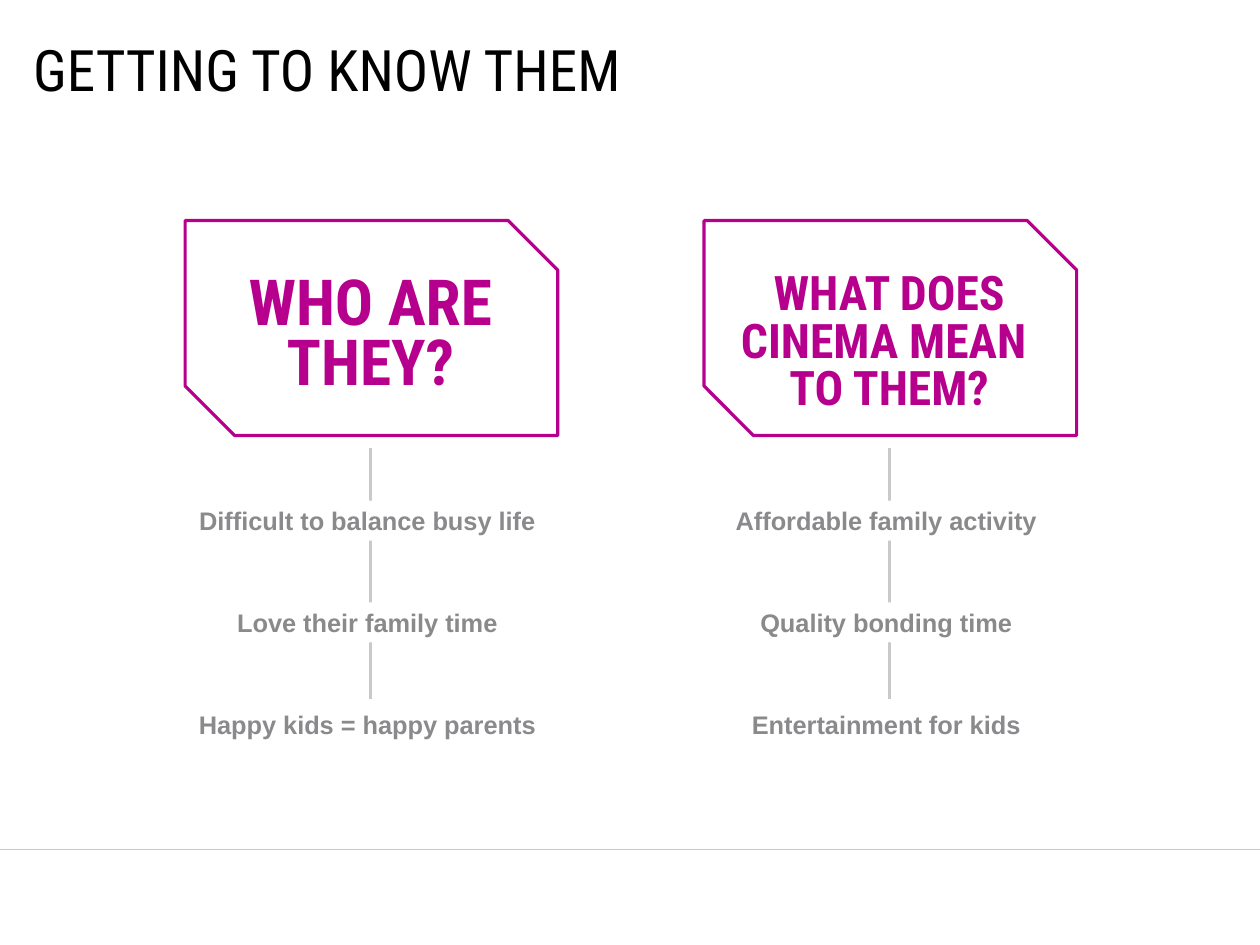
from dataclasses import dataclass

from lxml import etree
from pptx import Presentation
from pptx.dml.color import RGBColor
from pptx.enum.shapes import MSO_CONNECTOR, MSO_SHAPE
from pptx.enum.text import MSO_ANCHOR, PP_ALIGN
from pptx.oxml.ns import qn
from pptx.util import Cm, Inches, Pt

STRAIGHT = MSO_CONNECTOR.STRAIGHT
SNIPPED = MSO_SHAPE.SNIP_2_DIAG_RECTANGLE
MIDDLE = MSO_ANCHOR.MIDDLE
LEFT, CENTER = PP_ALIGN.LEFT, PP_ALIGN.CENTER


@dataclass(frozen=True)
class Theme:
    black: RGBColor = RGBColor(0x00, 0x00, 0x00)
    white: RGBColor = RGBColor(0xFF, 0xFF, 0xFF)
    magenta: RGBColor = RGBColor(0xB6, 0x00, 0x8D)
    gray: RGBColor = RGBColor(0x8A, 0x8A, 0x8D)
    rule: RGBColor = RGBColor(0xCA, 0xC8, 0xC8)
    display: str = "Roboto Condensed"
    body: str = "Arial"
    title_size: int = 36
    heading_sizes: tuple = (40, 30)
    label_size: int = 16


T = Theme()

# The page is 28 by 21 cm
prs = Presentation()
prs.slide_width = Cm(28)
prs.slide_height = Cm(21)
slide = prs.slides.add_slide(prs.slide_layouts[5])


def add_line(x1, y1, x2, y2, width):
    ln = slide.shapes.add_connector(STRAIGHT, Inches(x1), Inches(y1), Inches(x2), Inches(y2))
    ln.line.color.rgb = T.rule
    ln.line.width = Pt(width)
    etree.SubElement(ln._element.spPr, qn("a:effectLst"))


def write(sp, text, align, color, margins, wrap=True, spacing=None, **font):
    tf = sp.text_frame
    tf.word_wrap, tf.vertical_anchor = wrap, MIDDLE
    tf.margin_left = tf.margin_right = Inches(margins[0])
    tf.margin_top = tf.margin_bottom = Inches(margins[1])
    p = tf.paragraphs[0]
    p.text, p.alignment, p.line_spacing = text, align, spacing
    for r in p.runs:
        r.font.color.rgb = color
        for name, value in font.items():
            setattr(r.font, name, value)


# Title and footer rule
title = slide.shapes.title
title.left, title.top, title.width, title.height = map(Inches, (0.29, 0.38, 10.18, 0.45))
write(title, "GETTING TO KNOW THEM", LEFT, T.black, (0, 0), wrap=False,
      name=T.display, size=Pt(T.title_size), bold=False)
add_line(0, 7.43, 11.02, 7.43, 0.5)

# Columns: heading, its line pitch, top and height, then the labels
COLUMNS = [
    ("WHO ARE THEY?", 38, 2.37, 1.17,
     ["Difficult to balance busy life ", "Love their family time ", "Happy kids = happy parents "]),
    ("WHAT DOES\nCINEMA MEAN \nTO THEM?", 30, 2.33, 1.36,
     ["Affordable family activity ", "Quality bonding time ", "Entertainment for kids "]),
]
COLUMN_PITCH = 4.54
LABEL_PITCH = 0.89

for i, (heading, spacing, top, height, labels) in enumerate(COLUMNS):
    dx = i * COLUMN_PITCH

    # Card with two snipped corners
    card = slide.shapes.add_shape(SNIPPED, Inches(1.62 + dx), Inches(1.93), Inches(3.26), Inches(1.88))
    card.adjustments[0], card.adjustments[1] = 0, 0.23
    card.shadow.inherit = False
    card.fill.background()
    card.line.color.rgb = T.magenta
    card.line.width = Pt(2)

    # Heading
    box = slide.shapes.add_textbox(Inches(1.72 + dx), Inches(top), Inches(3.04), Inches(height))
    write(box, heading, CENTER, T.magenta, (0.1, 0.05), spacing=Pt(spacing),
          name=T.display, size=Pt(T.heading_sizes[i]), bold=True)

    # Stem, broken by the white labels
    add_line(3.24 + dx, 3.92, 3.24 + dx, 6.12, 2)
    for j, label in enumerate(labels):
        box = slide.shapes.add_textbox(Inches(1.29 + dx), Inches(4.38 + j * LABEL_PITCH),
                                       Inches(3.91), Inches(0.35))
        box.fill.solid()
        box.fill.fore_color.rgb = T.white
        write(box, label, CENTER, T.gray, (0.1, 0.04),
              name=T.body, size=Pt(T.label_size), bold=True)

prs.save("out.pptx")
